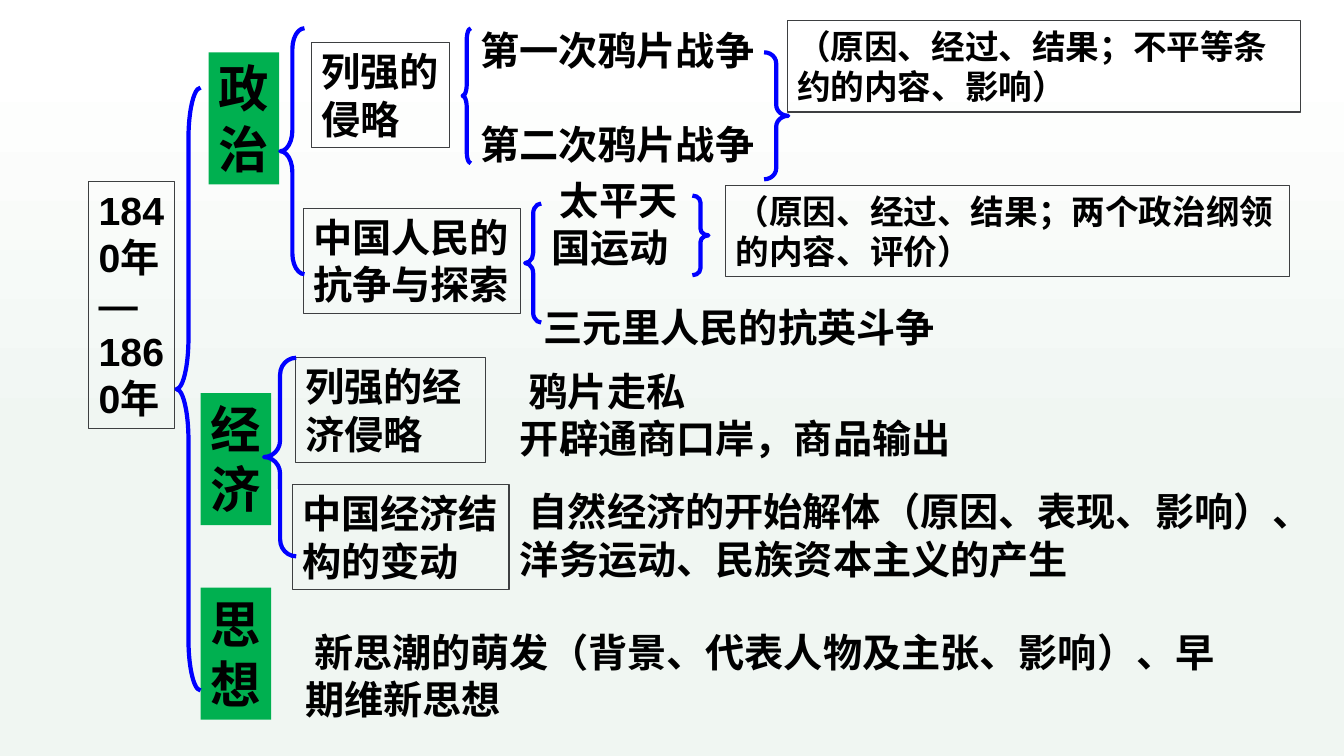
"""Build a bracket diagram that reviews Chinese history from 1840 to 1860."""
import pptx
import pptx.util
import pptx.dml.color
import pptx.enum.shapes
import pptx.enum.text

Pt = pptx.util.Pt
SHAPES = pptx.enum.shapes.MSO_SHAPE
FONT = "Arial"
INSET = 7.2
LINE_PITCH = 1.209
GREEN, BLUE, BORDER, BLACK = "00B050", "0000FF", "3D3F41", "000000"

# left, top, text lines
THEMES = [
    (149, 37.4, ["政", "治"]),
    (143.3, 280.8, ["经", "济"]),
    (143.3, 419.8, ["思", "想"]),
]
# left, top, width, line count, size, wrap, paragraphs
FRAMED = [
    (63.4, 129.6, 61.2, 5, 28, True, ["1840年", "—1860年"]),
    (222.5, 30.6, 98.6, 2, 28, False, ["列强的", "侵略"]),
    (216.7, 149, 154.8, 2, 28, False, ["中国人民的", "抗争与探索"]),
    (211, 255.6, 136.1, 2, 28, True, ["列强的经济侵略"]),
    (208.8, 346.3, 154.8, 2, 28, False, ["中国经济结", "构的变动"]),
    (562.3, 14.8, 366.5, 2, 24, True, ["（原因、经过、结果；不平等条约的内容、影响）"]),
    (518.4, 132.5, 402.5, 2, 24, True, ["（原因、经过、结果；两个政治纲领的内容、评价）"]),
]
# left, top, width, line count, wrap, gap between paragraphs, paragraphs
DETAILS = [
    (335.9, 15.1, 211.7, 3, False, 33.85, ["第一次鸦片战争", "第二次鸦片战争"]),
    (386.6, 122.4, 113, 2, True, 0, [" 太平天国运动"]),
    (380.9, 213.1, 295.9, 1, False, 0, ["三元里人民的抗英斗争"]),
    (364.3, 258.5, 362.9, 2, True, 0, [" 鸦片走私", "开辟通商口岸，商品输出"]),
    (364.3, 344.9, 565.2, 2, True, 0,
     [" 自然经济的开始解体（原因、表现、影响）、洋务运动、民族资本主义的产生"]),
    (211, 445, 671.8, 2, True, 0,
     [" 新思潮的萌发（背景、代表人物及主张、影响）、早期维新思想"]),
]
# shape, left, top, width, height, curve
BRACES = [
    (SHAPES.LEFT_BRACE, 126, 62.6, 17.3, 430.6, 2.11),
    (SHAPES.LEFT_BRACE, 200.2, 20.2, 17.3, 175.7, 0.86),
    (SHAPES.LEFT_BRACE, 330.5, 20.2, 5.8, 96.5, 1.4),
    (SHAPES.LEFT_BRACE, 375.1, 145.4, 11.5, 85, 0.62),
    (SHAPES.LEFT_BRACE, 188.6, 255.6, 23, 141.8, 0.52),
    (SHAPES.RIGHT_BRACE, 545.8, 37.4, 17.3, 90.7, 0.45),
    (SHAPES.RIGHT_BRACE, 494.6, 139.7, 11.5, 56.9, 0.42),
]


def color(value):
    return pptx.dml.color.RGBColor.from_string(value)


def add_shape(page, kind, left, top, width, height, fill=None, line=None, weight=0.75):
    shape = page.shapes.add_shape(kind, Pt(left), Pt(top), Pt(width), Pt(height))
    shape.shadow.inherit = False
    if fill:
        shape.fill.solid()
        shape.fill.fore_color.rgb = color(fill)
    else:
        shape.fill.background()
    if line:
        shape.line.color.rgb = color(line)
        shape.line.width = Pt(weight)
    else:
        shape.line.fill.background()
    return shape


def box_height(lines, size):
    return round(INSET + lines * size * LINE_PITCH, 2)


def write(box, paragraphs, size, wrap, gap=0):
    frame = box.text_frame
    frame.word_wrap = wrap
    frame.auto_size = pptx.enum.text.MSO_AUTO_SIZE.NONE
    frame.vertical_anchor = pptx.enum.text.MSO_ANCHOR.TOP
    for index, text in enumerate(paragraphs):
        para = frame.add_paragraph() if index else frame.paragraphs[0]
        para.text = text
        para.alignment = pptx.enum.text.PP_ALIGN.LEFT
        if index and gap:
            para.space_before = Pt(gap)
        para.font.name = FONT
        para.font.size = Pt(size)
        para.font.bold = True
        para.font.color.rgb = color(BLACK)


def add_backdrop(page):
    backdrop = add_shape(page, SHAPES.RECTANGLE, 0, 38, 960, 502)
    backdrop.fill.gradient()
    backdrop.fill.gradient_angle = 90
    for stop, (position, value) in zip(
        backdrop.fill.gradient_stops, [(0.44, "F0F6F2"), (1, "FFFFFF")]
    ):
        stop.position = position
        stop.color.rgb = color(value)


def main():
    deck = pptx.Presentation()
    deck.slide_width, deck.slide_height = Pt(960), Pt(540)
    page = deck.slides.add_slide(deck.slide_layouts[6])
    add_backdrop(page)
    for left, top, lines in THEMES:
        height = box_height(len(lines), 36)
        box = add_shape(page, SHAPES.RECTANGLE, left, top, 50.4, height, fill=GREEN)
        write(box, lines, 36, False)
    for left, top, width, lines, size, wrap, paragraphs in FRAMED:
        height = box_height(lines, size)
        box = add_shape(page, SHAPES.RECTANGLE, left, top, width, height, line=BORDER)
        write(box, paragraphs, size, wrap)
    for left, top, width, lines, wrap, gap, paragraphs in DETAILS:
        height = box_height(lines, 28)
        box = page.shapes.add_textbox(Pt(left), Pt(top), Pt(width), Pt(height))
        write(box, paragraphs, 28, wrap, gap)
    for kind, left, top, width, height, curve in BRACES:
        brace = add_shape(page, kind, left, top, width, height, line=BLUE, weight=3)
        brace.adjustments[0] = curve
    deck.save("out.pptx")


if __name__ == "__main__":
    main()
